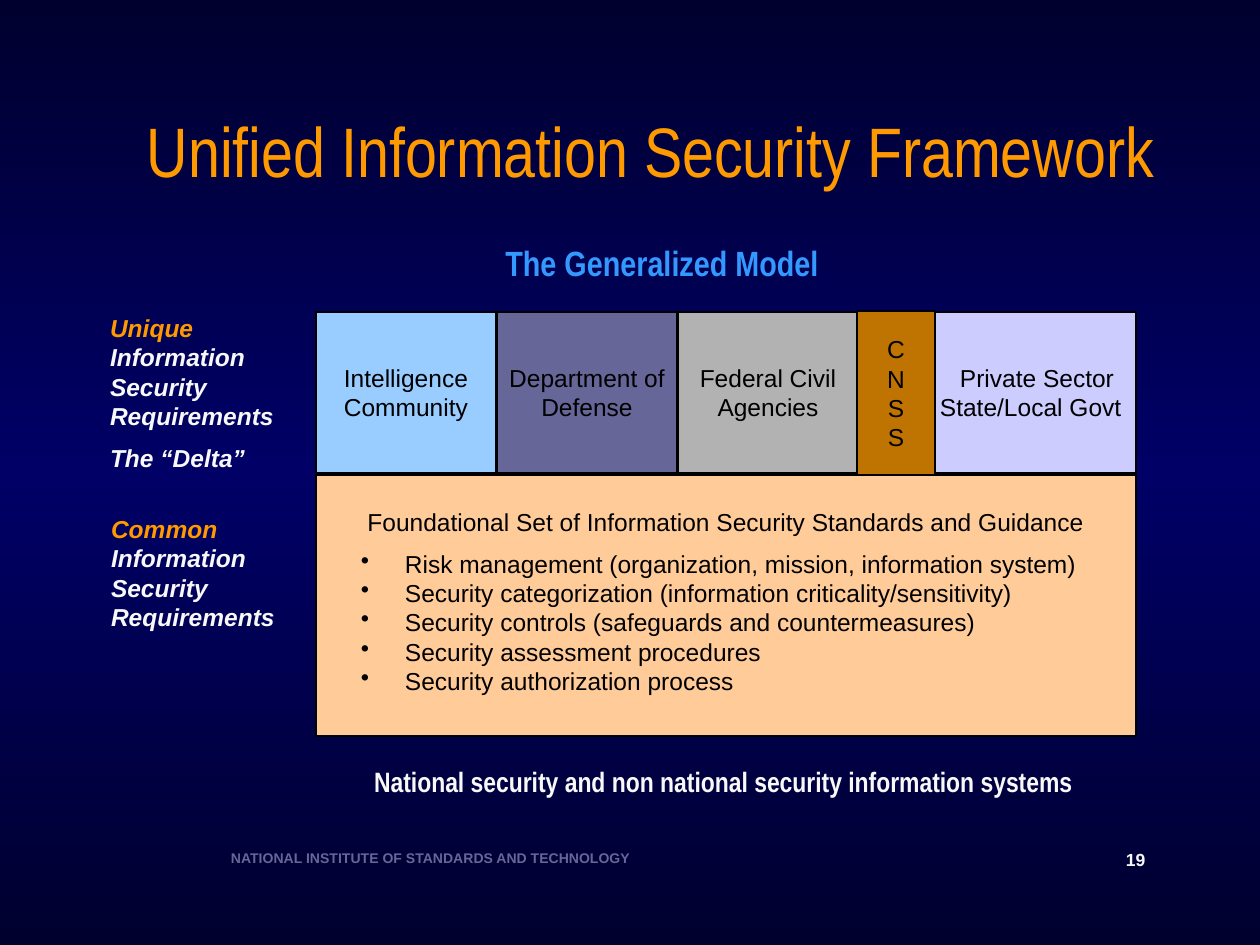
from copy import deepcopy
from dataclasses import dataclass

from lxml.etree import SubElement
from pptx import Presentation
from pptx.dml.color import RGBColor
from pptx.enum.shapes import MSO_SHAPE
from pptx.enum.text import MSO_ANCHOR, PP_ALIGN
from pptx.oxml.ns import qn
from pptx.util import Pt

PX = 914400 / 126


@dataclass(frozen=True)
class Theme:
    bg_edge: str = "00002F"
    bg_middle: str = "000066"
    accent: str = "FF9900"
    subtitle: str = "3399FF"
    light: str = "F8F8F8"
    dark: str = "000000"
    muted: str = "666699"
    foundation: str = "FFCC99"
    sans: str = "Arial"
    narrow: str = "Arial Narrow"
    title_size: int = 40
    subtitle_size: int = 20
    caption_size: int = 16
    body_size: int = 14
    number_size: int = 10
    footer_size: int = 8


T = Theme()
COMMUNITIES = [
    ("Intelligence Community", "99CCFF"),
    ("Department of Defense", "666699"),
    ("Federal Civil Agencies", "B2B2B2"),
]
PRACTICES = [
    "Risk management (organization, mission, information system)",
    "Security categorization (information criticality/sensitivity)",
    "Security controls (safeguards and countermeasures)",
    "Security assessment procedures",
    "Security authorization process",
]


def emu(px):
    return round(px * PX)


def rgb(value):
    return RGBColor.from_string(value)


def add_text(tf, text, *, size=T.body_size, color=T.dark, font=T.sans, bold=False,
             italic=False, align=PP_ALIGN.LEFT, before=0, after=0, spacing=None,
             left=0, hanging=0, bullet=None, lead=None):
    """Add one paragraph; lead is an opening phrase in the accent colour."""
    p = tf.paragraphs[0]
    if p.runs:
        p = tf.add_paragraph()
    p.alignment = align
    p.space_before, p.space_after = Pt(before), Pt(after)
    p.line_spacing = spacing
    pPr = p._p.get_or_add_pPr()
    pPr.set("marL", str(emu(left)))
    pPr.set("indent", str(-emu(hanging)))
    if bullet:
        SubElement(pPr, qn("a:buChar")).set("char", bullet)
    for part, part_color in ((lead, T.accent), (text, color)):
        if part:
            r = p.add_run()
            r.text = part
            r.font.size, r.font.name = Pt(size), font
            r.font.bold, r.font.italic = bold, italic
            r.font.color.rgb = rgb(part_color)


def set_frame(sp, anchor=MSO_ANCHOR.TOP, side=12, top=6):
    tf = sp.text_frame
    tf.word_wrap = True
    tf.vertical_anchor = anchor
    tf.margin_left = tf.margin_right = emu(side)
    tf.margin_top, tf.margin_bottom = emu(top), emu(6)
    return tf


def add_box(s, box, anchor=MSO_ANCHOR.TOP):
    return set_frame(s.shapes.add_textbox(*map(emu, box)), anchor)


def add_panel(s, box, fill, anchor=MSO_ANCHOR.MIDDLE, line=1, **frame):
    sp = s.shapes.add_shape(MSO_SHAPE.RECTANGLE, *map(emu, box))
    sp.shadow.inherit = False
    sp.fill.solid()
    sp.fill.fore_color.rgb = rgb(fill)
    sp.line.color.rgb = rgb(T.dark)
    sp.line.width = Pt(line)
    return set_frame(sp, anchor, **frame)


def set_background(s):
    fill = s.background.fill
    fill.gradient()
    fill.gradient_angle = 90
    first, last = fill.gradient_stops
    first.color.rgb = last.color.rgb = rgb(T.bg_edge)
    first.position, last.position = 0, 1
    # Middle stop
    stops = s.element.find(".//" + qn("a:gsLst"))
    stops.insert(1, deepcopy(stops[0]))
    middle = fill.gradient_stops[1]
    middle.position = 0.5
    middle.color.rgb = rgb(T.bg_middle)


def add_header(s, box):
    x, y, w, h = box
    title = s.shapes.title
    title.left, title.top, title.width, title.height = map(emu, box)
    add_text(set_frame(title, MSO_ANCHOR.MIDDLE, side=0),
             "Unified Information Security Framework", size=T.title_size,
             color=T.accent, font=T.narrow, align=PP_ALIGN.CENTER, spacing=0.8)
    add_text(add_box(s, (x + 241, y + h + 11, 574, 46), MSO_ANCHOR.MIDDLE),
             "The Generalized Model", size=T.subtitle_size, color=T.subtitle,
             font=T.narrow, bold=True, align=PP_ALIGN.CENTER)


def add_labels(s, box):
    x, y, w, h = box
    style = dict(color=T.light, bold=True, italic=True)
    unique = add_box(s, (x, y, w, 174))
    add_text(unique, "Information Security Requirements", lead="Unique ", **style)
    add_text(unique, "The “Delta”", before=7, **style)
    common = add_box(s, (x + 1, y + h - 130, w, 130))
    add_text(common, "Information Security Requirements", lead="Common ", **style)


def add_communities(s, box):
    x, y, w, h = box
    pitch = 181
    for i, (name, fill) in enumerate(COMMUNITIES):
        tf = add_panel(s, (x + i * pitch, y, pitch - 1, h), fill)
        add_text(tf, name, align=PP_ALIGN.CENTER)
    # Private sector, partly behind the narrow CNSS column
    private_x = 3 * pitch
    tf = add_panel(s, (x + private_x, y, w - private_x, h), "CCCCFF")
    add_text(tf, "Private Sector", left=89)
    add_text(tf, "State/Local Govt", left=69)
    tf = add_panel(s, (x + private_x - 2, y - 1, 78, h + 3), "BF7300", line=1.5)
    for letter in "CNSS":
        add_text(tf, letter, align=PP_ALIGN.CENTER)


def add_foundation(s, box):
    tf = add_panel(s, box, T.foundation, MSO_ANCHOR.TOP, top=32)
    add_text(tf, "Foundational Set of Information Security Standards and Guidance",
             align=PP_ALIGN.CENTER, after=7)
    for practice in PRACTICES:
        add_text(tf, practice, left=77, hanging=44, bullet="•")


def add_footer(s, box):
    x, y, w, h = box
    add_text(add_box(s, (x, y, 880, h)), "NATIONAL INSTITUTE OF STANDARDS AND TECHNOLOGY",
             size=T.footer_size, color=T.muted, bold=True)
    add_text(add_box(s, (x + w - 53, y, 53, h)), "19",
             size=T.number_size, color=T.light, bold=True)


def main():
    prs = Presentation()
    prs.slide_width, prs.slide_height = emu(1260), emu(945)
    s = prs.slides.add_slide(prs.slide_layouts[5])
    set_background(s)
    add_header(s, (134, 87, 1033, 141))
    add_labels(s, (98, 307, 208, 331))
    add_foundation(s, (316, 475, 820, 261))
    add_communities(s, (316, 312, 820, 161))
    # Caption under the model
    add_text(add_box(s, (314, 758, 819, 47), MSO_ANCHOR.MIDDLE),
             "National security and non national security information systems",
             size=T.caption_size, color=T.light, font=T.narrow, bold=True,
             align=PP_ALIGN.CENTER)
    add_footer(s, (219, 843, 948, 32))
    prs.save("out.pptx")


if __name__ == "__main__":
    main()
